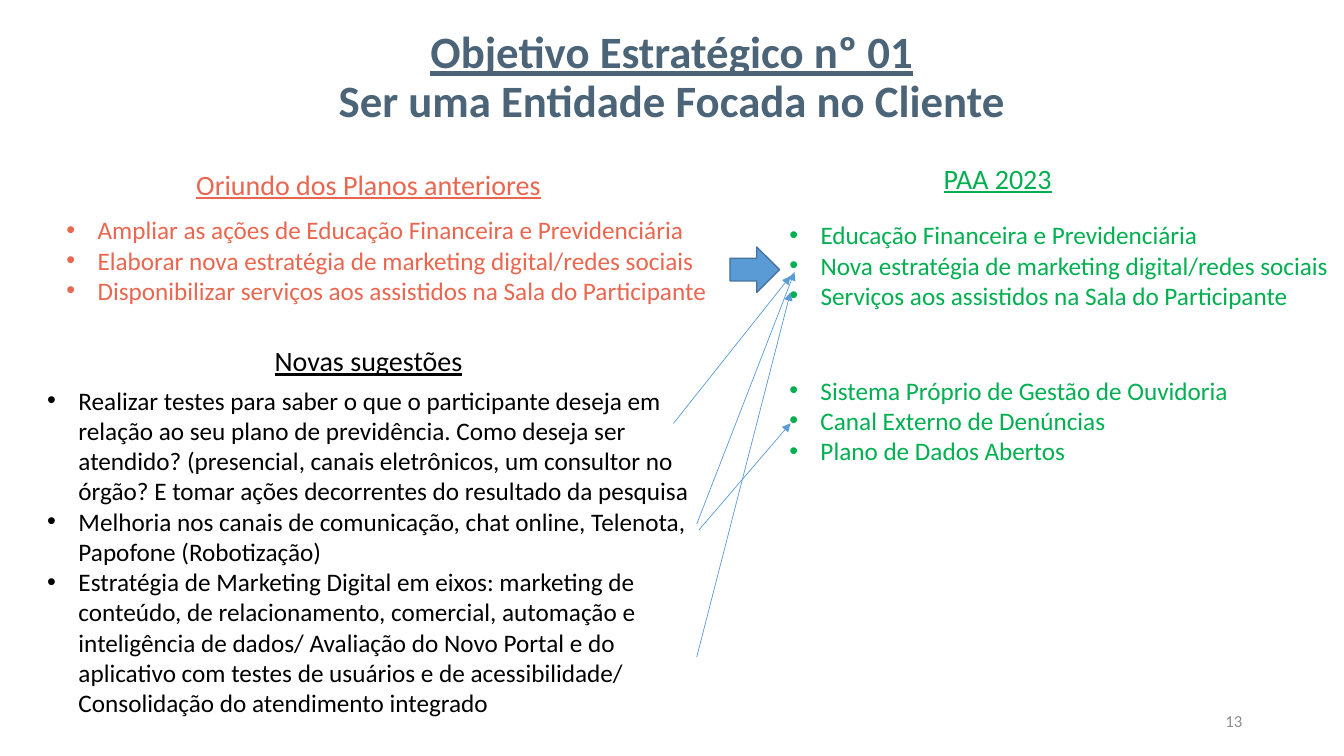
from lxml.etree import SubElement
from pptx import Presentation
from pptx.dml.color import RGBColor
from pptx.enum.shapes import MSO_CONNECTOR, MSO_SHAPE
from pptx.enum.text import MSO_ANCHOR, MSO_AUTO_SIZE, PP_ALIGN
from pptx.oxml.ns import qn
from pptx.util import Inches, Pt

COLORS = {
    "title": "4B6478",
    "previous": "EA664F",
    "plan": "00B050",
    "new": "000000",
    "number": "8C8C8C",
    "arrow": "5B9BD5",
    "outline": "43739E",
}


def add_run(p, text, size, color, bold=False, underline=False):
    r = p.add_run()
    r.text = text
    r.font.name = "Calibri"
    r.font.size = Pt(size)
    r.font.bold = bold
    r.font.underline = underline
    r.font.color.rgb = RGBColor.from_string(COLORS[color])


def add_box(box, lines, size, color, align, wrap=True, underline=False, bullets=False):
    sp = s.shapes.add_textbox(*map(Inches, box))
    tf = sp.text_frame
    tf.word_wrap = wrap
    tf.auto_size = MSO_AUTO_SIZE.SHAPE_TO_FIT_TEXT
    for i, line in enumerate(lines):
        p = tf.paragraphs[0] if i == 0 else tf.add_paragraph()
        p.alignment = align
        if bullets:
            pPr = p._p.get_or_add_pPr()
            pPr.set("marL", str(Inches(0.31)))
            pPr.set("indent", str(-Inches(0.31)))
            SubElement(pPr, qn("a:buFont"), typeface="Arial")
            SubElement(pPr, qn("a:buChar"), char="•")
        add_run(p, line, size, color, underline=underline)
    return tf


prs = Presentation()
prs.slide_width = Inches(13.33)
prs.slide_height = Inches(7.5)
s = prs.slides.add_slide(prs.slide_layouts[5])

title = s.shapes.title
title.left, title.top = Inches(0), Inches(0.19)
title.width, title.height = Inches(13.33), Inches(1.18)
tf = title.text_frame
tf.word_wrap = True
tf.auto_size = MSO_AUTO_SIZE.NONE
tf.vertical_anchor = MSO_ANCHOR.MIDDLE
for i, line in enumerate(["Objetivo Estratégico nº 01", "Ser uma Entidade Focada no Cliente"]):
    p = tf.paragraphs[0] if i == 0 else tf.add_paragraph()
    p.alignment = PP_ALIGN.CENTER
    p.line_spacing = 0.9
    add_run(p, line, 32, "title", bold=True, underline=i == 0)

number = add_box((9.42, 6.95, 3, 0.4), ["13"], 12, "number", PP_ALIGN.RIGHT)
number.auto_size = MSO_AUTO_SIZE.NONE
number.vertical_anchor = MSO_ANCHOR.MIDDLE

headings = [
    (1, 1.61, "Oriundo dos Planos anteriores", "previous"),
    (7.24, 1.55, "PAA 2023", "plan"),
    (1, 3.36, "Novas sugestões", "new"),
]
for left, top, text, color in headings:
    add_box((left, top, 5.31, 0.44), [text], 20, color, PP_ALIGN.CENTER, underline=True)

lists = [
    ((0.56, 2.08, 6.62, 1.01), "previous", PP_ALIGN.JUSTIFY, False, [
        "Ampliar as ações de Educação Financeira e Previdenciária",
        "Elaborar nova estratégia de marketing digital/redes sociais",
        "Disponibilizar serviços aos assistidos na Sala do Participante",
    ]),
    ((7.73, 2.13, 5.61, 1.01), "plan", PP_ALIGN.JUSTIFY, False, [
        "Educação Financeira e Previdenciária",
        "Nova estratégia de marketing digital/redes sociais",
        "Serviços aos assistidos na Sala do Participante",
    ]),
    ((7.73, 3.67, 5.26, 1.01), "plan", PP_ALIGN.JUSTIFY, True, [
        "Sistema Próprio de Gestão de Ouvidoria",
        "Canal Externo de Denúncias",
        "Plano de Dados Abertos",
    ]),
    ((0.37, 3.77, 6.75, 4.04), "new", PP_ALIGN.LEFT, True, [
        "Realizar testes para saber o que o participante deseja em relação ao seu plano de "
        "previdência. Como deseja ser atendido? (presencial, canais eletrônicos, um consultor "
        "no órgão? E tomar ações decorrentes do resultado da pesquisa",
        "Melhoria nos canais de comunicação, chat online, Telenota, Papofone (Robotização)",
        "Estratégia de Marketing Digital em eixos: marketing de conteúdo, de relacionamento, "
        "comercial, automação e inteligência de dados/ Avaliação do Novo Portal e do aplicativo "
        "com testes de usuários e de acessibilidade/ Consolidação do atendimento integrado",
    ]),
]
for box, color, align, wrap, lines in lists:
    add_box(box, lines, 18, color, align, wrap, bullets=True)

arrow = s.shapes.add_shape(
    MSO_SHAPE.RIGHT_ARROW, Inches(7.24), Inches(2.45), Inches(0.49), Inches(0.45)
)
arrow.shadow.inherit = False
arrow.fill.solid()
arrow.fill.fore_color.rgb = RGBColor.from_string(COLORS["arrow"])
arrow.line.color.rgb = RGBColor.from_string(COLORS["outline"])
arrow.line.width = Pt(1)

links = [
    (6.68, 4.2, 7.84, 2.74),
    (6.91, 5.2, 7.88, 2.7),
    (6.93, 5.26, 7.84, 4.2),
    (6.91, 6.52, 7.84, 2.9),
]
for ends in links:
    link = s.shapes.add_connector(MSO_CONNECTOR.STRAIGHT, *map(Inches, ends))
    link.line.color.rgb = RGBColor.from_string(COLORS["arrow"])
    link.line.width = Pt(0.5)
    SubElement(link.line._get_or_add_ln(), qn("a:tailEnd"), type="triangle")
    SubElement(link._element.spPr, qn("a:effectLst"))

prs.save("out.pptx")
